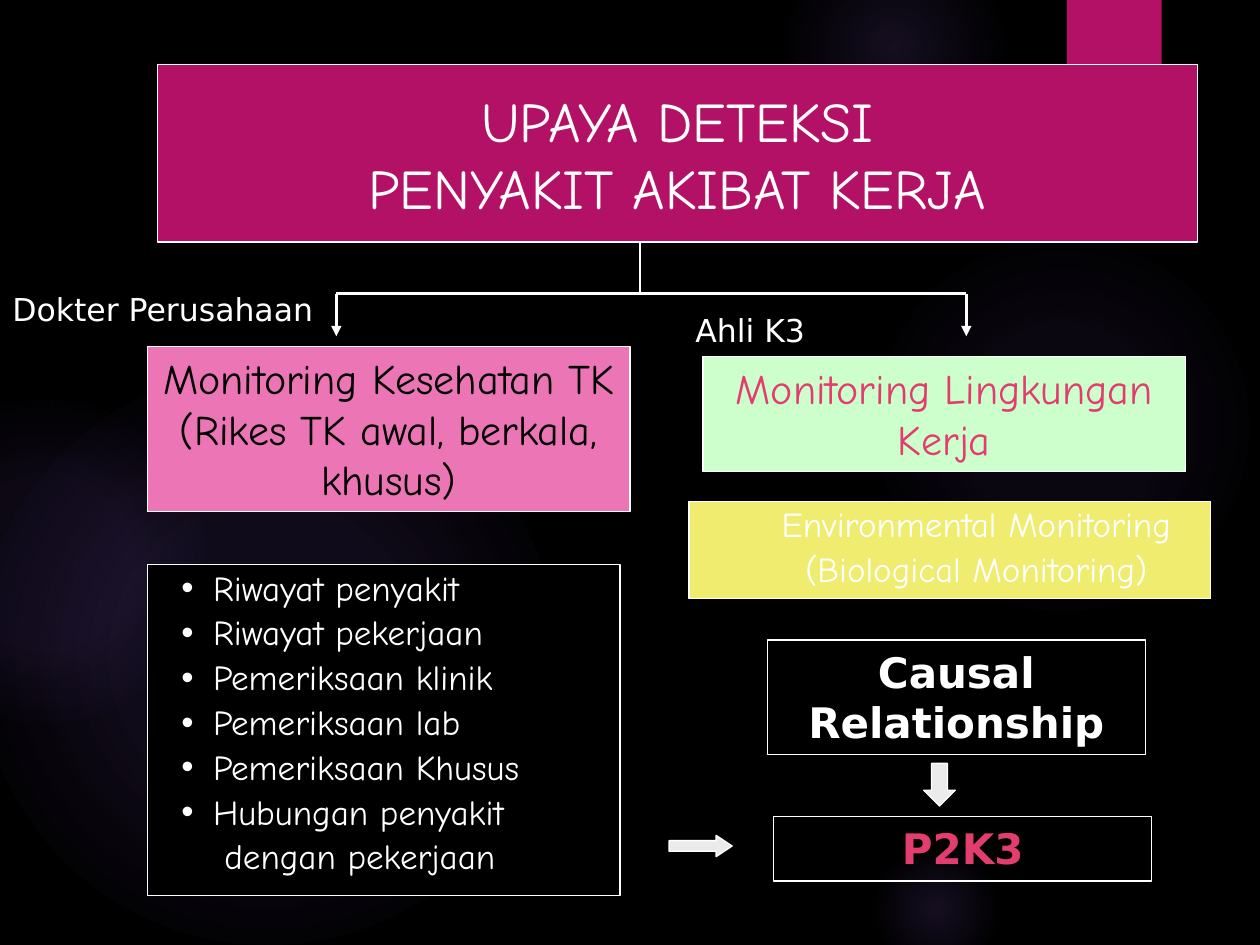
from dataclasses import dataclass
from typing import Optional

from lxml.etree import SubElement
from pptx import Presentation
from pptx.dml.color import RGBColor
from pptx.enum.shapes import MSO_CONNECTOR, MSO_SHAPE
from pptx.enum.text import MSO_ANCHOR, MSO_AUTO_SIZE, PP_ALIGN
from pptx.oxml.ns import qn
from pptx.util import Cm, Pt

HAND, SANS = "Comic Neue", "DejaVu Sans"
WHITE, BLACK, MAGENTA, ROSE = "FFFFFF", "000000", "B31166", "E33D6F"
GLOW, ARROW_FILL = "9B6BF2", "EBEBEB"
LIST_MARGIN, LAST_MARGIN, BULLET_HANG = Cm(1.07), Cm(1.3), Cm(-0.64)


@dataclass
class Glow:
    left: float
    top: float
    size: float
    stops: list[tuple[int, int]]  # position and opacity, in percent


@dataclass
class Box:
    left: float
    top: float
    width: float
    height: float
    lines: list[str]
    size: int
    font: str = HAND
    color: str = WHITE
    fill: Optional[str] = None
    outlined: bool = True
    bold: bool = False
    align: PP_ALIGN = PP_ALIGN.CENTER
    anchor: MSO_ANCHOR = MSO_ANCHOR.TOP
    margin: int = 0
    line_spacing: float = 1.0


GLOWS = [
    Glow(17.5, 4.65, 7.82, [(0, 7), (36, 6), (69, 0)]),
    Glow(15.8, -1.27, 4.45, [(0, 14), (36, 7), (73, 0)]),
    Glow(17.5, 16.94, 2.74, [(0, 14), (36, 7), (66, 0)]),
    Glow(-0.43, 7.42, 11.63, [(0, 11), (36, 10), (75, 0)]),
    Glow(-2.34, 8.05, 6.55, [(0, 8), (36, 8), (72, 0)]),
]

TITLE = Box(3.18, 1.3, 20.96, 3.58, ["UPAYA DETEKSI\vPENYAKIT AKIBAT KERJA"], 32,
            fill=MAGENTA, anchor=MSO_ANCHOR.MIDDLE)
EXAMINATIONS = Box(
    2.97, 11.38, 9.53, 6.68,
    ["Riwayat penyakit", "Riwayat pekerjaan", "Pemeriksaan klinik", "Pemeriksaan lab",
     "Pemeriksaan Khusus", "Hubungan penyakit", "dengan pekerjaan"],
    20, fill=BLACK, align=PP_ALIGN.LEFT, margin=LIST_MARGIN, line_spacing=0.9)
BOXES = [
    Box(2.97, 6.99, 9.73, 3.33, ["Monitoring Kesehatan TK (Rikes TK awal, berkala, khusus)"],
        24, color=BLACK, fill="EC76B5"),
    Box(14.17, 7.19, 9.73, 2.31, ["Monitoring Lingkungan Kerja"], 24, color=ROSE, fill="CCFFCC"),
    Box(13.89, 10.11, 10.52, 1.96, ["Environmental Monitoring", "(Biological Monitoring)"],
        20, fill="EFEC6F", margin=LIST_MARGIN, line_spacing=0.9),
    Box(0, 5.72, 7.19, 1.02, ["Dokter Perusahaan"], 18, SANS,
        outlined=False, align=PP_ALIGN.LEFT),
    Box(13.77, 6.15, 7.19, 1.02, ["Ahli K3"], 18, SANS, outlined=False, align=PP_ALIGN.LEFT),
    Box(15.47, 12.9, 7.62, 2.31, ["Causal Relationship"], 24, SANS, bold=True),
    Box(15.6, 16.46, 7.62, 1.3, ["P2K3"], 24, SANS, ROSE, bold=True),
]


def rgb(value: str) -> RGBColor:
    return RGBColor.from_string(value)


def paint(shape, fill: Optional[str], line: Optional[str]) -> None:
    if fill:
        shape.fill.solid()
        shape.fill.fore_color.rgb = rgb(fill)
    else:
        shape.fill.background()
    if line:
        shape.line.color.rgb = rgb(line)
        shape.line.width = Pt(0.75)
    else:
        shape.line.fill.background()


def add_preset(slide, preset: MSO_SHAPE, left: float, top: float, width: float,
               height: float, fill: Optional[str], line: Optional[str] = None):
    shape = slide.shapes.add_shape(preset, Cm(left), Cm(top), Cm(width), Cm(height))
    shape.shadow.inherit = False
    paint(shape, fill, line)
    return shape


def add_glow(slide, glow: Glow) -> None:
    """Draw a circle whose colour fades out from its centre."""
    shape = add_preset(slide, MSO_SHAPE.OVAL, glow.left, glow.top, glow.size, glow.size, None)
    properties = shape._element.spPr
    gradient = SubElement(properties, qn("a:gradFill"), rotWithShape="1")
    properties.replace(properties.find(qn("a:noFill")), gradient)
    stops = SubElement(gradient, qn("a:gsLst"))
    for position, opacity in glow.stops:
        stop = SubElement(stops, qn("a:gs"), pos=str(position * 1000))
        color = SubElement(stop, qn("a:srgbClr"), val=GLOW)
        SubElement(color, qn("a:alpha"), val=str(opacity * 1000))
    path = SubElement(gradient, qn("a:path"), path="circle")
    SubElement(path, qn("a:fillToRect"), l="50000", t="50000", r="50000", b="50000")


def write_text(shape, box: Box) -> None:
    frame = shape.text_frame
    frame.word_wrap = True
    frame.auto_size = MSO_AUTO_SIZE.NONE
    frame.vertical_anchor = box.anchor
    for index, text in enumerate(box.lines):
        paragraph = frame.paragraphs[0] if index == 0 else frame.add_paragraph()
        paragraph.text = text
        paragraph.alignment = box.align
        paragraph.line_spacing = box.line_spacing
        paragraph.space_before = Pt(4 if index else 0)
        set_indent(paragraph, box.margin, 0)
        paragraph.font.name = box.font
        paragraph.font.size = Pt(box.size)
        paragraph.font.bold = box.bold
        paragraph.font.color.rgb = rgb(box.color)


def set_indent(paragraph, margin: int, indent: int) -> None:
    properties = paragraph._p.get_or_add_pPr()
    properties.set("marL", str(margin))
    properties.set("indent", str(indent))


def set_bullet(paragraph, bullet: Optional[str]) -> None:
    properties = paragraph._p.get_or_add_pPr()
    if bullet:
        element = SubElement(properties, qn("a:buChar"), char=bullet)
    else:
        element = SubElement(properties, qn("a:buNone"))
    properties.find(qn("a:defRPr")).addprevious(element)


def fill_placeholder(slide, placeholder, box: Box) -> None:
    """Place and format a placeholder in front of the shapes drawn so far."""
    placeholder.left, placeholder.top = Cm(box.left), Cm(box.top)
    placeholder.width, placeholder.height = Cm(box.width), Cm(box.height)
    paint(placeholder, box.fill, WHITE)
    write_text(placeholder, box)
    slide.shapes._spTree.append(placeholder._element)


def add_box(slide, box: Box) -> None:
    place = (box.left, box.top, box.width, box.height)
    if box.outlined:
        shape = add_preset(slide, MSO_SHAPE.RECTANGLE, *place, box.fill, WHITE)
    else:
        shape = slide.shapes.add_textbox(*map(Cm, place))
    write_text(shape, box)


def add_line(slide, x1: float, y1: float, x2: float, y2: float, arrow: bool = False) -> None:
    line = slide.shapes.add_connector(MSO_CONNECTOR.STRAIGHT, Cm(x1), Cm(y1), Cm(x2), Cm(y2))
    line.line.color.rgb = rgb(WHITE)
    line.line.width = Pt(1.5)
    if arrow:
        SubElement(line.line._get_or_add_ln(), qn("a:tailEnd"), type="triangle")
    SubElement(line._element.spPr, qn("a:effectLst"))


def add_branches(slide) -> None:
    """Join the title to the two monitoring columns."""
    branch_y, left_x, right_x, stem_x = 5.92, 6.78, 19.48, 12.9
    add_line(slide, left_x, branch_y, right_x, branch_y)
    for x in (left_x, right_x):
        add_line(slide, x, branch_y, x, 6.78, arrow=True)
    add_line(slide, stem_x, TITLE.top + TITLE.height, stem_x, branch_y)


def main() -> None:
    presentation = Presentation()
    presentation.slide_width, presentation.slide_height = Cm(25.4), Cm(19.05)
    slide = presentation.slides.add_slide(presentation.slide_layouts[1])
    slide.background.fill.solid()
    slide.background.fill.fore_color.rgb = rgb(BLACK)

    for glow in GLOWS:
        add_glow(slide, glow)
    add_preset(slide, MSO_SHAPE.RECTANGLE, 21.51, 0, 1.91, 3.05, MAGENTA)

    fill_placeholder(slide, slide.shapes.title, TITLE)
    body = slide.placeholders[1]
    fill_placeholder(slide, body, EXAMINATIONS)
    *items, continuation = body.text_frame.paragraphs
    for paragraph in items:
        set_indent(paragraph, LIST_MARGIN, BULLET_HANG)
        set_bullet(paragraph, "•")
    set_indent(continuation, LAST_MARGIN, 0)
    set_bullet(continuation, None)

    add_branches(slide)
    for box in BOXES:
        add_box(slide, box)
    right_arrow = add_preset(slide, MSO_SHAPE.RIGHT_ARROW, 13.49, 16.84, 1.27, 0.43,
                             ARROW_FILL, WHITE)
    right_arrow.adjustments[1] = 0.75
    add_preset(slide, MSO_SHAPE.DOWN_ARROW, 18.62, 15.39, 0.64, 0.86, ARROW_FILL, WHITE)
    presentation.save("out.pptx")


if __name__ == "__main__":
    main()
